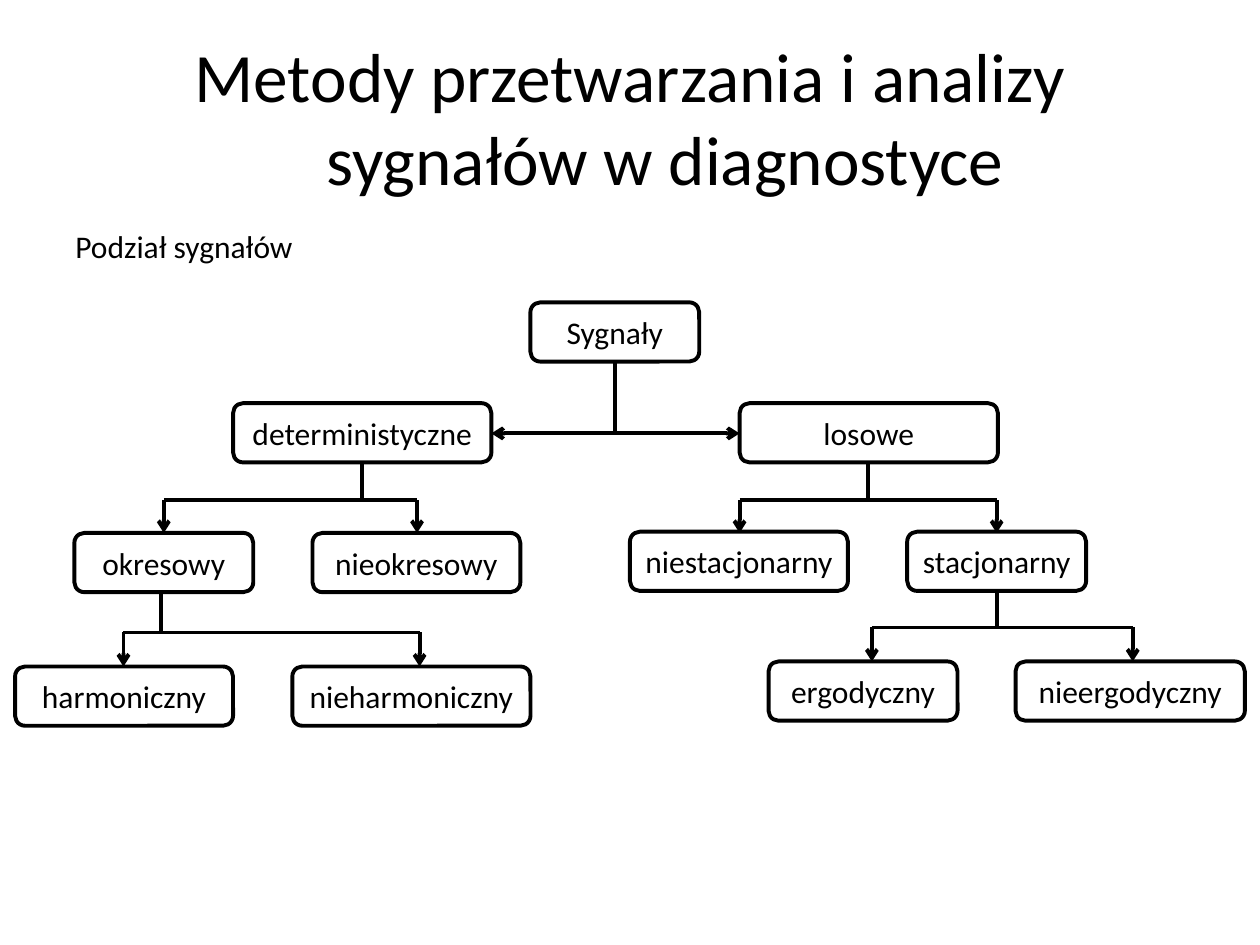
from lxml.etree import SubElement
from pptx import Presentation
from pptx.dml.color import RGBColor
from pptx.enum.shapes import MSO_CONNECTOR, MSO_SHAPE
from pptx.enum.text import MSO_ANCHOR, PP_ALIGN
from pptx.oxml.ns import qn
from pptx.util import Inches, Pt


def rgb(value):
    return RGBColor.from_string(value)


class SignalTree:
    """Draws a tree of signal classes on one slide in a single style."""

    ink, paper = "000000", "FFFFFF"
    font, size, weight = "Calibri", 18, 2.25
    box_height = 0.47

    def __init__(self, slide):
        self.s = slide

    def apply(self, target, values):
        for name, value in values.items():
            setattr(target, name, value)

    def label(self, sp, text, size, align, anchor, side=0.1):
        tf = sp.text_frame
        self.apply(tf, {"word_wrap": True, "vertical_anchor": anchor,
                        "margin_left": Inches(side), "margin_right": Inches(side)})
        p = tf.paragraphs[0]
        p.alignment = align
        r = p.add_run()
        r.text = text
        self.apply(r.font, {"name": self.font, "size": Pt(size)})
        r.font.color.rgb = rgb(self.ink)
        return p

    def text(self, at, text, size=size, align=PP_ALIGN.LEFT, anchor=MSO_ANCHOR.TOP):
        sp = self.s.shapes.add_textbox(*map(Inches, at))
        return self.label(sp, text, size, align, anchor)

    def title(self, at, text, hanging):
        p = self.text(at, text, 39.6, PP_ALIGN.CENTER, MSO_ANCHOR.MIDDLE)
        pPr = p._p.get_or_add_pPr()
        pPr.set("marL", str(Inches(hanging)))
        pPr.set("indent", str(-Inches(hanging)))

    def box(self, text, left, top, width):
        sp = self.s.shapes.add_shape(
            MSO_SHAPE.ROUNDED_RECTANGLE, *map(Inches, (left, top, width, self.box_height)))
        sp.shadow.inherit = False
        sp.fill.solid()
        sp.fill.fore_color.rgb = rgb(self.paper)
        sp.line.color.rgb = rgb(self.ink)
        sp.line.width = Pt(self.weight)
        self.label(sp, text, self.size, PP_ALIGN.CENTER, MSO_ANCHOR.MIDDLE, 0.05)

    def line(self, x1, y1, x2, y2, ends=()):
        sp = self.s.shapes.add_connector(
            MSO_CONNECTOR.STRAIGHT, *map(Inches, (x1, y1, x2, y2)))
        sp.line.color.rgb = rgb(self.ink)
        sp.line.width = Pt(self.weight)
        ln = sp.line._get_or_add_ln()
        for end in ends:
            SubElement(ln, qn(f"a:{end}"), type="arrow")
        SubElement(sp._element.spPr, qn("a:effectLst"))

    def fork(self, stem, top, bar, left, right, tip):
        self.line(stem, top, stem, bar)
        self.line(left, bar, right, bar)
        for x in (left, right):
            self.line(x, bar, x, tip, ["tailEnd"])


BOXES = [
    ("Sygnały", 4.21, 2.4, 1.34),
    ("deterministyczne", 1.85, 3.2, 2.05),
    ("losowe", 5.87, 3.2, 2.05),
    ("niestacjonarny", 5, 4.22, 1.73),
    ("stacjonarny", 7.2, 4.22, 1.42),
    ("ergodyczny", 6.1, 5.25, 1.5),
    ("nieergodyczny", 8.06, 5.25, 1.82),
    ("okresowy", 0.59, 4.23, 1.42),
    ("nieokresowy", 2.48, 4.23, 1.65),
    ("harmoniczny", 0.12, 5.29, 1.73),
    ("nieharmoniczny", 2.32, 5.29, 1.89),
]
FORKS = [
    (2.87, 3.66, 3.97, 1.3, 3.31, 4.23),
    (1.28, 4.69, 5.02, 0.98, 3.33, 5.29),
    (6.89, 3.66, 3.97, 5.87, 7.91, 4.23),
    (7.91, 4.69, 4.98, 6.92, 8.99, 5.25),
]


def main():
    prs = Presentation()
    prs.slide_width, prs.slide_height = Inches(10), Inches(7.5)
    tree = SignalTree(prs.slides.add_slide(prs.slide_layouts[6]))
    tree.title((0.5, 0.3, 9, 1.25),
               "Metody przetwarzania i analizy sygnałów w diagnostyce", 0.56)
    p = tree.text((0.5, 1.75, 9, 4.95), "Podział sygnałów")
    p.space_before = Pt(3.6)
    for item in BOXES:
        tree.box(*item)
    tree.line(4.88, 2.87, 4.88, 3.44)
    tree.line(3.9, 3.44, 5.87, 3.44, ["headEnd", "tailEnd"])
    for item in FORKS:
        tree.fork(*item)
    prs.save("out.pptx")


if __name__ == "__main__":
    main()
